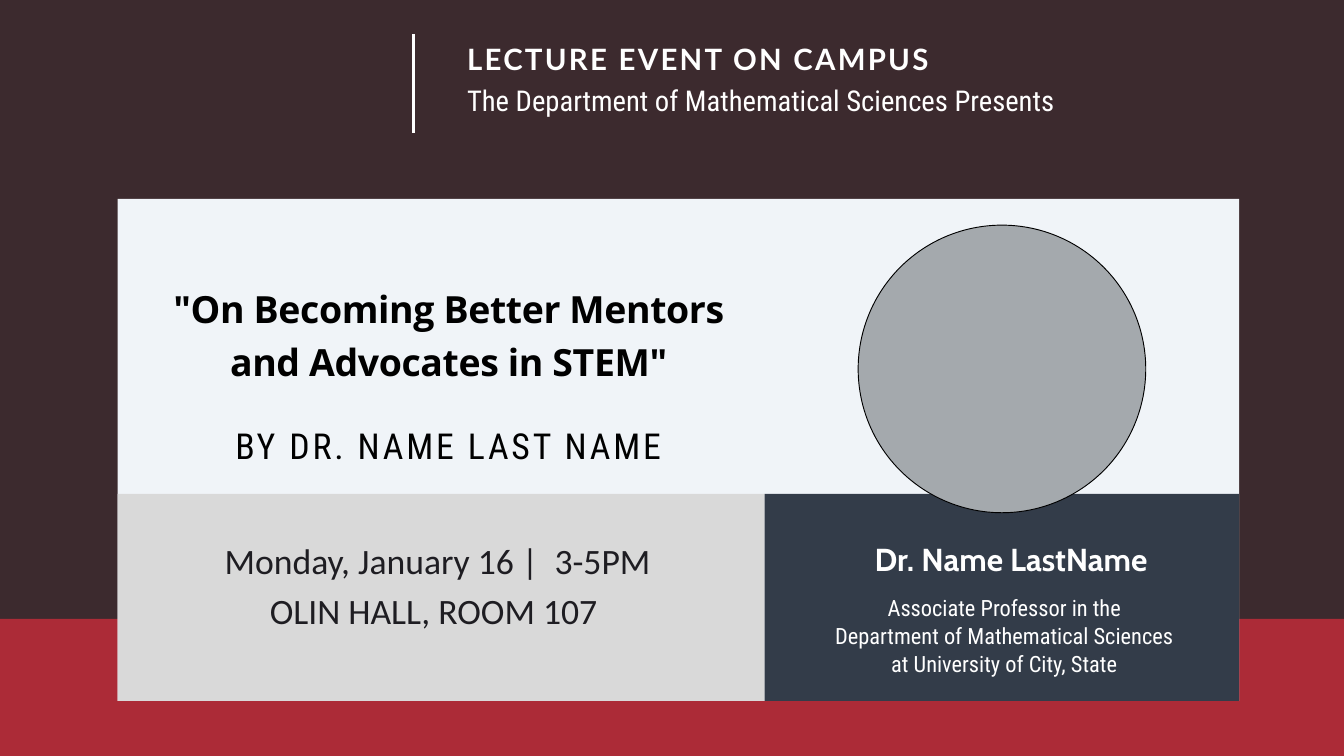
from typing import NamedTuple, Optional

from lxml.etree import SubElement
from pptx import Presentation
from pptx.dml.color import RGBColor
from pptx.enum.shapes import MSO_CONNECTOR, MSO_SHAPE
from pptx.enum.text import MSO_ANCHOR as Anchor, MSO_AUTO_SIZE as AutoSize, PP_ALIGN as Align
from pptx.oxml.ns import qn
from pptx.util import Inches, Pt

COLORS = {
    "backdrop": "3C2A2E",
    "band": "AC2B37",
    "card": "F0F4F8",
    "schedule": "D9D9D9",
    "speaker": "333C49",
    "portrait": "A4A9AD",
    "ink": "1E1D22",
    "black": "000000",
    "white": "FFFFFF",
}

CARD_LEFT, CARD_TOP, CARD_RIGHT, CARD_BOTTOM = 1.75, 2.96, 18.44, 10.43
FOOTER_TOP, SPEAKER_LEFT = 7.35, 11.38
SLIDE_WIDTH, SLIDE_HEIGHT, BAND_TOP = 20, 11.25, 9.21


class Box(NamedTuple):
    left: float
    top: float
    width: float
    height: float


class Panel(NamedTuple):
    kind: MSO_SHAPE
    box: Box
    fill: str
    outline: Optional[str] = None


class Line(NamedTuple):
    text: str
    font: str
    size: float
    color: str
    leading: float
    bold: bool = False
    tracking: float = 0


class TextBlock(NamedTuple):
    box: Box
    lines: list[Line]
    align: Align = Align.CENTER


def from_edges(left: float, top: float, right: float, bottom: float) -> Box:
    return Box(left, top, right - left, bottom - top)


PANELS = [
    Panel(MSO_SHAPE.RECTANGLE, from_edges(0, BAND_TOP, SLIDE_WIDTH, SLIDE_HEIGHT), "band"),
    Panel(MSO_SHAPE.RECTANGLE, from_edges(CARD_LEFT, CARD_TOP, CARD_RIGHT, CARD_BOTTOM), "card"),
    Panel(MSO_SHAPE.RECTANGLE, from_edges(CARD_LEFT, FOOTER_TOP, SPEAKER_LEFT, CARD_BOTTOM), "schedule"),
    Panel(MSO_SHAPE.RECTANGLE, from_edges(SPEAKER_LEFT, FOOTER_TOP, CARD_RIGHT, CARD_BOTTOM), "speaker"),
    Panel(MSO_SHAPE.OVAL, Box(12.77, 3.35, 4.28, 4.28), "portrait", "black"),
]

TALK = TextBlock(Box(2.23, 4.15, 8.89, 2.51), [
    Line('"On Becoming Better Mentors and Advocates in STEM"', "Open Sans", 40.1, "black", 56.1, True, -0.4),
    Line("BY DR. NAME LAST NAME", "Roboto Condensed", 38.3, "black", 88.8, tracking=3.1),
])

TEXT_BLOCKS = [
    TextBlock(Box(6.95, 0.53, 10.17, 1.19), [
        Line("LECTURE EVENT ON CAMPUS", "Lato", 31.5, "white", 44.2, True, 2.5),
        Line("The Department of Mathematical Sciences Presents", "Roboto Condensed", 30.7, "white", 43),
    ], Align.JUSTIFY),
    TextBlock(Box(1.9, 7.91, 9.22, 1.53), [
        Line(text, "Calibri", 38.2, "ink", 53.5)
        for text in ("Monday, January 16 |  3-5PM", "OLIN HALL, ROOM 107 ")
    ]),
    TextBlock(Box(11.65, 7.98, 6.79, 0.67), [
        Line("Dr. Name LastName", "Cabin", 34, "white", 44.2, True),
    ]),
    TextBlock(Box(12.41, 8.83, 5.07, 1.2), [
        Line("Associate Professor in the Department of Mathematical Sciences at University of City, State",
             "Roboto Condensed", 24, "white", 30),
    ]),
]


def rgb(name: str) -> RGBColor:
    return RGBColor.from_string(COLORS[name])


def place(shape, box: Box) -> None:
    shape.left, shape.top, shape.width, shape.height = map(Inches, box)


def draw_panel(slide, panel: Panel) -> None:
    shape = slide.shapes.add_shape(panel.kind, *map(Inches, panel.box))
    shape.shadow.inherit = False
    shape.fill.solid()
    shape.fill.fore_color.rgb = rgb(panel.fill)
    if panel.outline:
        shape.line.color.rgb = rgb(panel.outline)
        shape.line.width = Pt(1)
    else:
        shape.line.fill.background()


def write_text(shape, block: TextBlock) -> None:
    place(shape, block.box)
    frame = shape.text_frame
    frame.word_wrap = True
    frame.auto_size = AutoSize.NONE
    frame.vertical_anchor = Anchor.TOP
    frame.margin_left = frame.margin_top = frame.margin_right = frame.margin_bottom = 0
    frame.text = "\n".join(line.text for line in block.lines)
    for paragraph, line in zip(frame.paragraphs, block.lines):
        paragraph.alignment = block.align
        paragraph.line_spacing = Pt(line.leading)
        for run in paragraph.runs:
            run.font.name = line.font
            run.font.size = Pt(line.size)
            run.font.bold = line.bold
            run.font.color.rgb = rgb(line.color)
            run.font._element.set("spc", str(round(line.tracking * 100)))


def draw_header_rule(slide) -> None:
    rule = slide.shapes.add_connector(
        MSO_CONNECTOR.STRAIGHT, Inches(6.15), Inches(0.51), Inches(6.15), Inches(1.98))
    rule.line.color.rgb = rgb("white")
    rule.line.width = Pt(3)
    SubElement(rule._element.spPr, qn("a:effectLst"))


def main() -> None:
    presentation = Presentation()
    presentation.slide_width = Inches(SLIDE_WIDTH)
    presentation.slide_height = Inches(SLIDE_HEIGHT)
    slide = presentation.slides.add_slide(presentation.slide_layouts[5])
    slide.background.fill.solid()
    slide.background.fill.fore_color.rgb = rgb("backdrop")

    for panel in PANELS:
        draw_panel(slide, panel)
    for block in TEXT_BLOCKS:
        write_text(slide.shapes.add_textbox(*map(Inches, block.box)), block)

    title = slide.shapes.title
    write_text(title, TALK)
    title.element.getparent().append(title.element)
    draw_header_rule(slide)
    presentation.save("out.pptx")


if __name__ == "__main__":
    main()
